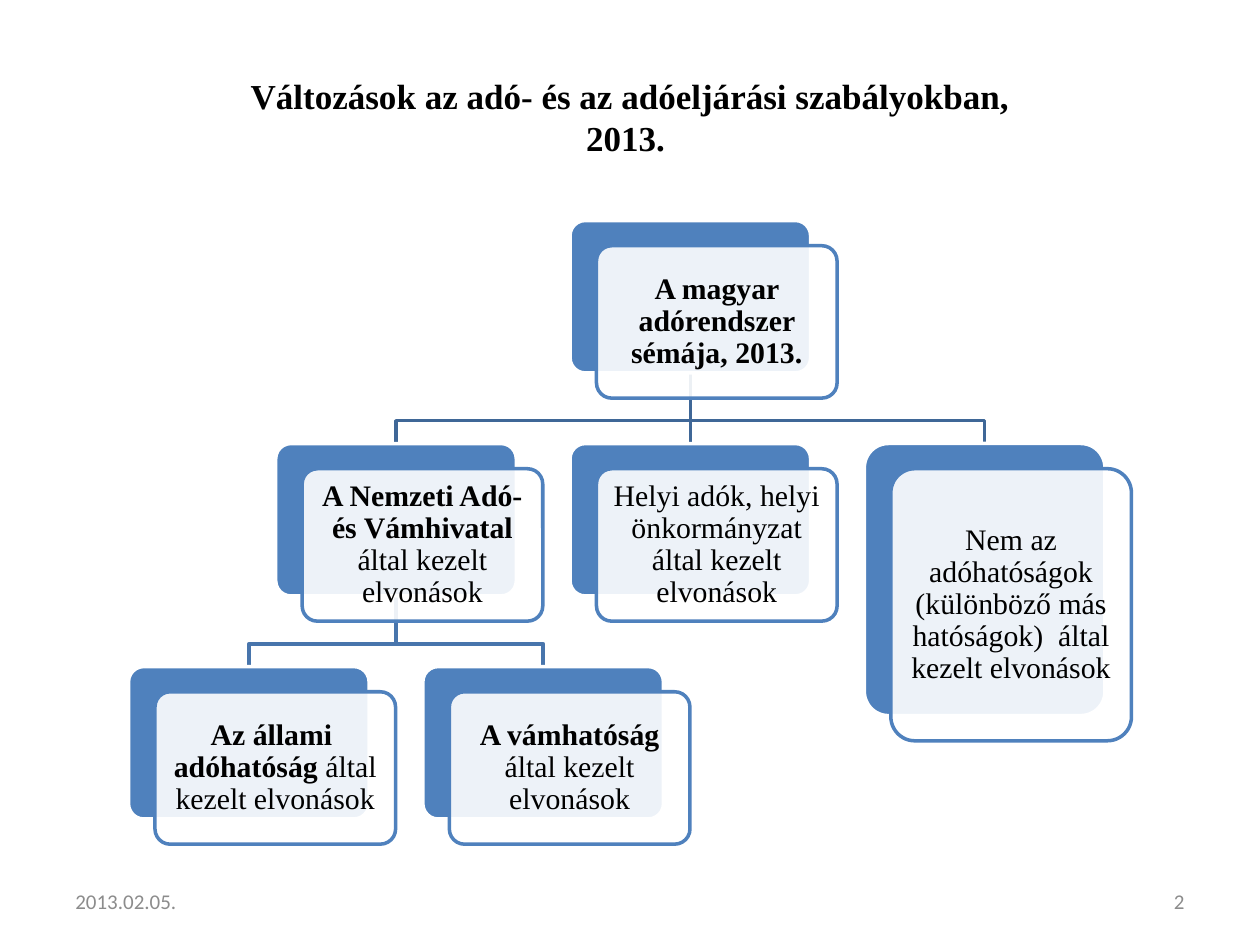
from dataclasses import dataclass

from lxml.etree import SubElement
from pptx import Presentation
from pptx.dml.color import RGBColor
from pptx.enum.shapes import MSO_CONNECTOR as CONN, MSO_SHAPE as SHAPE
from pptx.enum.text import MSO_ANCHOR as ANCHOR, MSO_AUTO_SIZE as AUTO, PP_ALIGN as ALIGN
from pptx.oxml.ns import qn
from pptx.util import Inches, Pt


@dataclass(frozen=True)
class Theme:
    serif: str = "Times New Roman"
    sans: str = "Calibri"
    text: str = "000000"
    muted: str = "8C8C8C"
    accent: str = "4F81BD"
    paper: str = "FFFFFF"
    upper_link: str = "3F6797"
    lower_link: str = "4875AC"
    title_size: int = 20
    card_size: int = 17
    footer_size: int = 12
    line_width: int = 2


CARD_W, CARD_H, TALL_H = 1.91, 1.21, 2.16
LEFT, TOP = 1.02, 1.75
COL_STEP, ROW_STEP = 5.84 / 5, 1.77
FRONT_DX, FRONT_DY = 0.21, 0.2
BEND = 0.38  # drop from the parent card to the horizontal branch

# name: (column, row, height, bold text, plain text)
CARDS = {
    "system": (3, 0, CARD_H, "A magyar adórendszer sémája, 2013.", ""),
    "national": (1, 1, CARD_H, "A Nemzeti Adó- és Vámhivatal ", "által kezelt elvonások"),
    "state": (0, 2, CARD_H, "Az állami  adóhatóság ", "által kezelt elvonások"),
    "customs": (2, 2, CARD_H, "A vámhatóság ", "által kezelt elvonások"),
    "local": (3, 1, CARD_H, "", "Helyi adók, helyi önkormányzat által kezelt elvonások"),
    "other": (5, 1, TALL_H, "",
              "Nem az adóhatóságok (különböző más hatóságok)  által kezelt elvonások"),
}
CHILDREN = {"national": ("state", "customs"), "system": ("national", "local", "other")}


def rgb(code):
    return RGBColor.from_string(code)


def write(p, text, *, font, size, color, bold=False):
    r = p.add_run()
    r.text = text
    r.font.name, r.font.size, r.font.bold = font, Pt(size), bold
    r.font.color.rgb = rgb(color)


class Deck:
    def __init__(self, theme):
        self.theme = theme
        self.prs = Presentation()
        self.prs.slide_width, self.prs.slide_height = Inches(10), Inches(7.5)
        self.s = self.prs.slides.add_slide(self.prs.slide_layouts[5])

    def title(self, *lines):
        t = self.theme
        sp = self.s.shapes.title
        sp.left, sp.top, sp.width, sp.height = map(Inches, (0.5, 0.3, 9, 1.25))
        tf = sp.text_frame
        tf.auto_size, tf.vertical_anchor = AUTO.NONE, ANCHOR.MIDDLE
        p = tf.paragraphs[0]
        p.alignment = ALIGN.CENTER
        for i, line in enumerate(lines):
            if i:
                p.add_line_break()
            write(p, line, font=t.serif, size=t.title_size, color=t.text, bold=True)

    def footer(self, text, left, align):
        t = self.theme
        tf = self.s.shapes.add_textbox(*map(Inches, (left, 6.95, 2.33, 0.4))).text_frame
        tf.word_wrap, tf.vertical_anchor = True, ANCHOR.MIDDLE
        p = tf.paragraphs[0]
        p.alignment = align
        write(p, text, font=t.sans, size=t.footer_size, color=t.muted)

    def panel(self, x, y, h, fill, line):
        sp = self.s.shapes.add_shape(SHAPE.ROUNDED_RECTANGLE, *map(Inches, (x, y, CARD_W, h)))
        sp.adjustments[0] = 0.1
        sp.shadow.inherit = False
        sp.fill.solid()
        sp.fill.fore_color.rgb = rgb(fill)
        sp.line.color.rgb = rgb(line)
        sp.line.width = Pt(self.theme.line_width)
        return sp

    def card(self, col, row, h, strong, plain):
        """Draw a solid panel under an offset translucent one; return the solid one."""
        t = self.theme
        x, y = LEFT + col * COL_STEP, TOP + row * ROW_STEP
        back = self.panel(x, y, h, t.accent, t.paper)
        front = self.panel(x + FRONT_DX, y + FRONT_DY, h, t.paper, t.accent)
        color = front.fill._xPr.find(qn("a:solidFill"))[0]
        SubElement(color, qn("a:alpha"), val="90000")
        tf = front.text_frame
        tf.word_wrap, tf.vertical_anchor = True, ANCHOR.MIDDLE
        tf.margin_left = tf.margin_right = tf.margin_top = tf.margin_bottom = Inches(0.07)
        p = tf.paragraphs[0]
        p.alignment, p.line_spacing = ALIGN.CENTER, 0.9
        for text, bold in ((strong, True), (plain, False)):
            if text:
                write(p, text, font=t.serif, size=t.card_size, color=t.text, bold=bold)
        return back

    def link(self, parent, child, color):
        """Join two cards behind all others, with a bend unless they are aligned."""
        x1, y1 = parent.left + parent.width // 2, parent.top + parent.height
        x2, y2 = child.left + child.width // 2, child.top
        if x1 == x2:
            sp = self.s.shapes.add_connector(CONN.STRAIGHT, x1, y1, x2, y2)
            sp.begin_connect(parent, 2)
            sp.end_connect(child, 0)
        else:
            bend = y1 + Inches(BEND)
            path = self.s.shapes.build_freeform(x1, y1)
            path.add_line_segments([(x1, bend), (x2, bend), (x2, y2)], close=False)
            sp = path.convert_to_shape()
            sp.fill.background()
        sp.line.color.rgb = rgb(color)
        sp.line.width = Pt(self.theme.line_width)
        SubElement(sp._element.spPr, qn("a:effectLst"))
        self.s.shapes._spTree.insert(2, sp._element)


def main():
    theme = Theme()
    deck = Deck(theme)
    deck.title("Változások az adó- és az adóeljárási szabályokban,", "2013. ")
    cards = {name: deck.card(*spec_row) for name, spec_row in CARDS.items()}
    for parent, children in CHILDREN.items():
        color = theme.upper_link if parent == "system" else theme.lower_link
        for child in children:
            deck.link(cards[parent], cards[child], color)
    deck.footer("2013.02.05.", 0.5, ALIGN.LEFT)
    deck.footer("2", 7.17, ALIGN.RIGHT)
    deck.prs.save("out.pptx")


if __name__ == "__main__":
    main()
